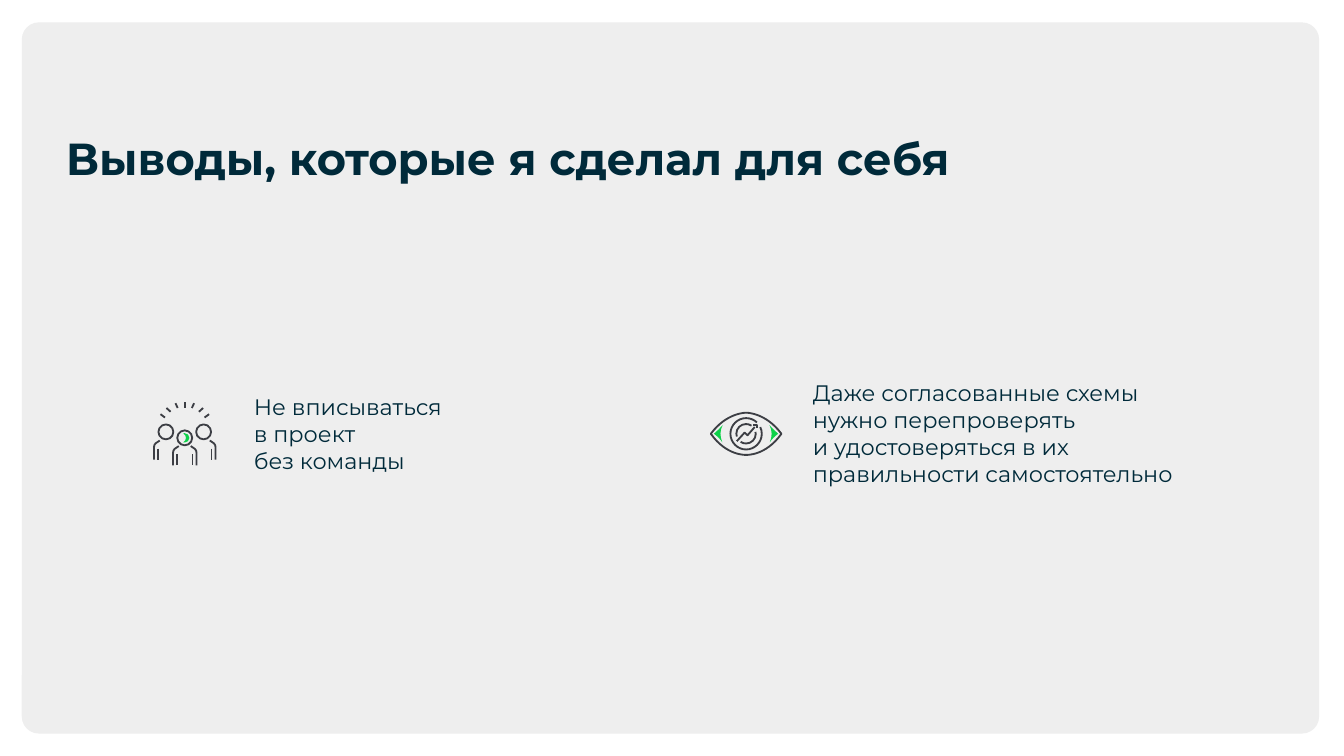
"""Build the conclusions slide: a title and two takeaways with line icons."""
from lxml.etree import SubElement
from pptx import Presentation
from pptx.dml.color import RGBColor as RGB
from pptx.enum.shapes import MSO_CONNECTOR as CONN, MSO_SHAPE as SHAPE
from pptx.enum.text import MSO_ANCHOR as ANCHOR, MSO_AUTO_SIZE as FIT, PP_ALIGN as ALIGN
from pptx.oxml.ns import qn
from pptx.util import Pt

COLORS = {"panel": "EEEEEE", "text": "002A3A", "line": "3C3E44", "accent": "0DD149"}
RGBS = {name: RGB.from_string(value) for name, value in COLORS.items()}


def paint(sp, fill=None, line=None):
    """Set the fill and outline of a shape, and drop its shadow."""
    sp.shadow.inherit = False
    if fill:
        sp.fill.solid()
        sp.fill.fore_color.rgb = RGBS[fill]
    else:
        sp.fill.background()
    if line:
        sp.line.color.rgb, sp.line.width = RGBS[line], Pt(1)
    else:
        sp.line.fill.background()


def trace(icon, origin, side, points, curved=True, fill=None):
    """Draw an outline around an origin; curved takes points by threes as Béziers."""
    spots = [(Pt(origin[0] + side * x), Pt(origin[1] + y)) for x, y in points]
    builder = icon.shapes.build_freeform(*spots[0])
    builder.add_line_segments(spots[1:], close=bool(fill))
    sp = builder.convert_to_shape()
    paint(sp, fill, None if fill else "line")
    lines = list(sp.element.iter(qn("a:lnTo"))) if curved else []
    for i in range(0, len(points) - 1 if curved else 0, 3):
        curve = SubElement(lines[i].getparent(), qn("a:cubicBezTo"))
        lines[i].addprevious(curve)
        for line in lines[i:i + 3]:
            curve.append(line[0])
            line.getparent().remove(line)


prs = Presentation()
prs.slide_width, prs.slide_height = Pt(720), Pt(405)
s = prs.slides.add_slide(prs.slide_layouts[5])

panel = s.shapes.add_shape(SHAPE.ROUNDED_RECTANGLE, Pt(11.7), Pt(12), Pt(695), Pt(381))
panel.adjustments[0] = 0.024
paint(panel, "panel")

title = s.shapes.title
title.element.addprevious(panel.element)
title.text_frame.text = "Выводы, которые я сделал для себя"
title.text_frame.paragraphs[0].line_spacing = 0.8

first = s.shapes.add_textbox(0, 0, 0, 0)
first.text_frame.text = "Не вписываться \vв проект\nбез команды"
second = s.shapes.add_textbox(0, 0, 0, 0)
second.text_frame.text = (
    "Даже согласованные схемы нужно перепроверять \v"
    "и удостоверяться в их правильности самостоятельно"
)

texts = [
    (title, (28.1, 72, 678, 32), 7.2, FIT.NONE, {"size": Pt(24), "bold": True}),
    (first, (136, 207, 145.4, 51), 0, FIT.SHAPE_TO_FIT_TEXT, {"size": Pt(12)}),
    (second, (435.5, 199.7, 211, 65.5), 0, FIT.SHAPE_TO_FIT_TEXT, {"size": Pt(12)}),
]
for sp, box, inset, fit, font in texts:
    for name, value in zip(("left", "top", "width", "height"), box):
        setattr(sp, name, Pt(value))
    tf = sp.text_frame
    frame = {"word_wrap": True, "auto_size": fit, "vertical_anchor": ANCHOR.TOP,
             "margin_left": Pt(inset), "margin_right": Pt(inset),
             "margin_top": Pt(3.6), "margin_bottom": Pt(3.6)}
    for name, value in frame.items():
        setattr(tf, name, value)
    for p in tf.paragraphs:
        p.alignment = ALIGN.LEFT
        for r in p.runs:
            r.font.color.rgb = RGBS["text"]
            for name, value in {"name": "Montserrat", **font}.items():
                setattr(r.font, name, value)

team = s.shapes.add_group_shape()
cx, cy = 99, 234.6
strokes = [(0, -16.2, 0, -19)]
shoulder = [(3.2, 4.4), (5.4, 5.9), (5.4, 5.9), (5.4, 5.9), (6, 6.4), (6.3, 7.2), (6.3, 8),
            (6.3, 14.7), (6.3, 14.7), (6.3, 14.7)]
for side in (-1, 1):
    strokes += [(side * x1, y1, side * x2, y2) for x1, y1, x2, y2 in (
        (3.8, -16, 5, -18.6), (7.6, -14, 9.8, -16), (10.6, -10.9, 13, -12.7))]
    for dx, dy in ((0, 0), (10.2, -3)):
        x = side * (4.1 + dx)
        strokes.append((x, 8.8 + dy, x, 14.7 + dy))
        trace(team, (cx + side * dx, cy + dy), side, shoulder)
for x1, y1, x2, y2 in strokes:
    stroke = team.shapes.add_connector(
        CONN.STRAIGHT, Pt(cx + x1), Pt(cy + y1), Pt(cx + x2), Pt(cy + y2))
    stroke.line.color.rgb, stroke.line.width = RGBS["line"], Pt(1)
    SubElement(stroke.element.spPr, qn("a:effectLst"))
for dx, dy in ((-10.1, -3.2), (0, 0), (10.1, -3.2)):
    head = team.shapes.add_shape(
        SHAPE.OVAL, Pt(cx + dx - 4), Pt(cy + dy - 4), Pt(8), Pt(8))
    paint(head, line="line")
crescent = [(0, -2.5), (-0.3, -2.5), (-0.5, -2.5), (-0.8, -2.4), (0.1, -1.9), (0.7, -1),
            (0.7, 0), (0.7, 1), (0.1, 1.9), (-0.8, 2.4), (-0.5, 2.5), (-0.3, 2.5), (0, 2.5),
            (1.4, 2.5), (2.5, 1.4), (2.5, 0), (2.5, -1.4), (1.4, -2.5), (0, -2.5)]
trace(team, (cx, cy), 1, crescent, fill="accent")

eye = s.shapes.add_group_shape()
center = (399.7, 232.4)
lid = [(0, 11.3), (0, 11.3), (10.4, 12), (18.9, 0), (10.4, -11.5), (0, -11.3), (0, -11.3)]
corner = [(17.2, 0), (15.1, 1.6), (13.7, 3), (12.7, 4.6), (13.4, 3), (13.7, 1.5), (13.7, 0),
          (13.7, -1.5), (13.3, -3.3), (12.5, -4.7), (13.7, -3.3), (15.1, -1.8), (17.2, 0)]
for side in (-1, 1):
    trace(eye, center, side, lid)
    trace(eye, center, side, corner, fill="accent")
rings = [
    [(5.8, -6.1), (4.3, -7.5), (2.2, -8.4), (0, -8.4), (-4.6, -8.4), (-8.4, -4.6), (-8.4, 0),
     (-8.4, 4.6), (-4.6, 8.4), (0, 8.4), (4.6, 8.4), (8.4, 4.6), (8.4, 0),
     (8.4, -1.3), (8.1, -2.5), (7.6, -3.6)],
    [(2.9, -4.3), (2.1, -4.9), (1, -5.2), (0, -5.2), (-2.9, -5.2), (-5.2, -2.9), (-5.2, 0),
     (-5.2, 0.5), (-5.1, 1), (-4.9, 1.5)],
    [(-2.9, 4.3), (-2.1, 4.9), (-1, 5.2), (0, 5.2), (2.9, 5.2), (5.2, 2.9), (5.2, 0),
     (5.2, -0.4), (5.1, -0.7), (5, -1)],
]
for ring in rings:
    trace(eye, center, 1, ring)
for arrow in ([(4.6, -3.6), (0.8, 0.8), (-0.8, -0.6), (-5, 4)],
              [(5.8, -3), (5.8, -4.9), (3.9, -4.9)]):
    trace(eye, center, 1, arrow, curved=False)

prs.save("out.pptx")
